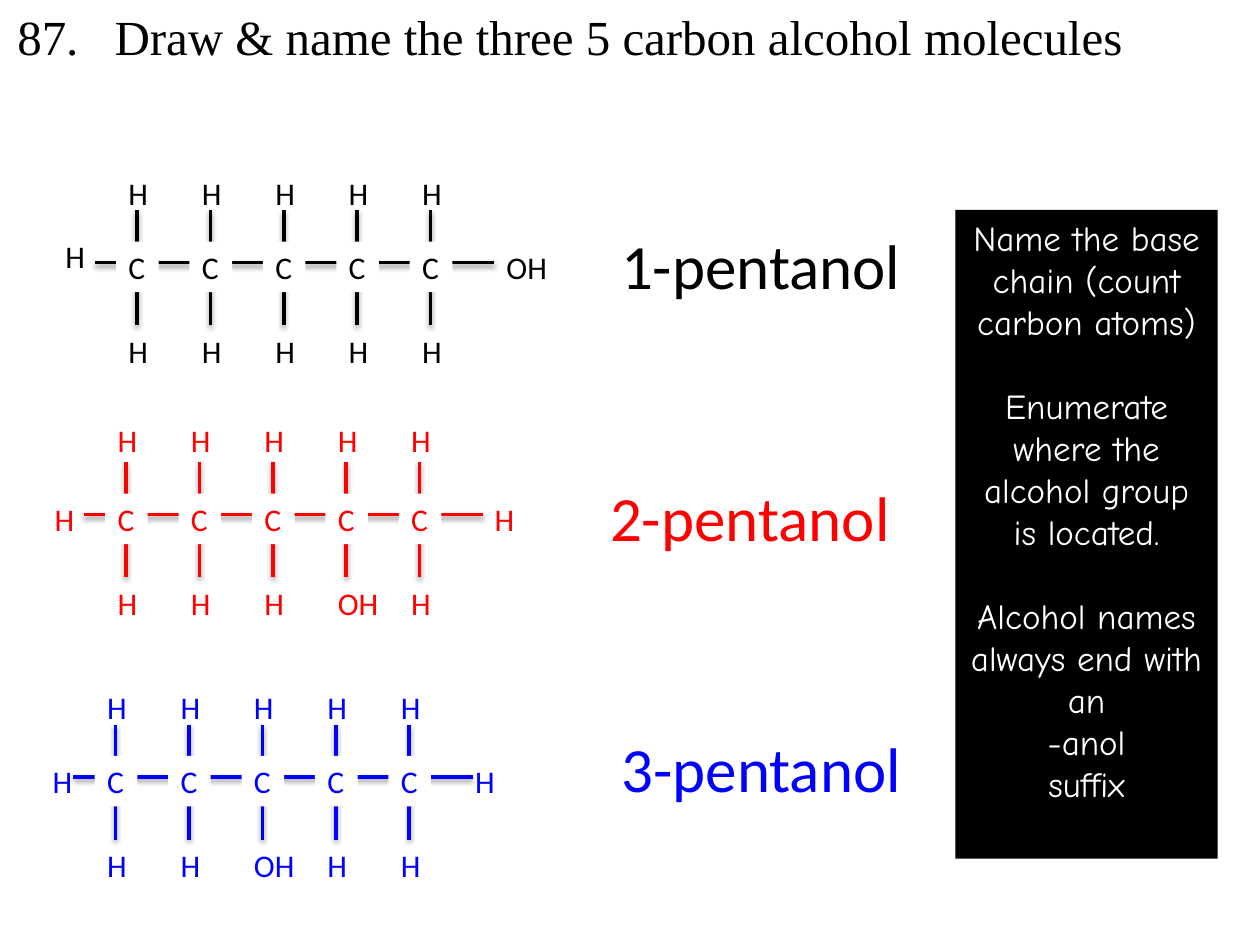
from dataclasses import dataclass

from lxml import etree
from pptx import Presentation
from pptx.dml.color import RGBColor
from pptx.enum import shapes, text
from pptx.oxml import ns, parse_xml
from pptx.util import Cm, Pt


@dataclass(frozen=True)
class Theme:
    black: str = "000000"
    white: str = "FFFFFF"
    red: str = "FF0000"
    blue: str = "0000FF"
    title_font: str = "Times New Roman"
    body_font: str = "Calibri"
    note_font: str = "Comic Neue"
    title: int = 28
    name: int = 36
    note: int = 20
    atom: int = 18
    bond: int = 2


@dataclass(frozen=True)
class Molecule:
    name: str
    color: str
    box: tuple          # left, top of the drawing
    below: str          # atoms under the chain, split by tabs
    left_at: tuple      # left end atom: offset from the chain's start
    right: str
    right_at: tuple     # right end atom: offset from the chain's start
    name_at: tuple      # name: offset from the chain's start
    lift: float = 0     # extra height of the upper hydrogens


T = Theme()
CARBONS = 5
PITCH = 1.48            # distance between carbons
CHAIN_W = 8.05
AXIS = 1.91             # chain's depth below the top of the drawing
FIRST_BOND = 0.85
LINE_H = 1.02

MOLECULES = [
    Molecule("1-pentanol", T.black, (1.91, 3.38), "H\tH\tH\tH\tH",
             (-0.84, -0.64), "OH", (8.05, -0.42), (10.36, -0.84)),
    Molecule("2-pentanol", T.red, (1.69, 8.46), "H\tH\tH\tOH\tH",
             (-0.84, -0.42), "H", (8.03, -0.42), (10.36, -0.84), 0.1),
    Molecule("3-pentanol", T.blue, (1.48, 13.75), "H\tH\tOH\tH\tH",
             (-0.67, -0.42), "H", (7.85, -0.42), (10.8, -1.07)),
]


def rgb(color):
    return RGBColor.from_string(color)


def add_run(p, words, size, color, font):
    r = p.add_run()
    r.text = words
    r.font.size, r.font.name = Pt(size), font
    r.font.color.rgb = rgb(color)


def set_tabs(p, stops):
    tabs = etree.SubElement(p._p.get_or_add_pPr(), ns.qn("a:tabLst"))
    for stop in stops:
        etree.SubElement(tabs, ns.qn("a:tab"), pos=str(Cm(stop)), algn="l")


def add_label(s, x, y, w, h, words, size, color, font=T.body_font, stops=()):
    tf = s.shapes.add_textbox(Cm(x), Cm(y), Cm(w), Cm(h)).text_frame
    tf.word_wrap = True
    p = tf.paragraphs[0]
    if stops:
        set_tabs(p, stops)
    add_run(p, words, size, color, font)


def add_block(s, x, y, w, h, fill):
    sp = s.shapes.add_shape(shapes.MSO_SHAPE.RECTANGLE, Cm(x), Cm(y), Cm(w), Cm(h))
    sp.shadow.inherit = False
    sp.fill.solid()
    sp.fill.fore_color.rgb = rgb(fill)
    sp.line.fill.background()
    sp.text_frame.vertical_anchor = text.MSO_ANCHOR.TOP
    return sp.text_frame


def add_bond(s, x1, y1, x2, y2, color):
    line = s.shapes.add_connector(shapes.MSO_CONNECTOR.STRAIGHT,
                                  Cm(x1), Cm(y1), Cm(x2), Cm(y2))
    line.line.color.rgb = rgb(color)
    line.line.width = Pt(T.bond)
    line._element.spPr.append(parse_xml(
        f'<a:effectLst {ns.nsdecls("a")}>'
        f'<a:outerShdw blurRad="{Pt(3.1)}" dist="{Pt(1.6)}" dir="5400000" rotWithShape="0">'
        f'<a:srgbClr val="{T.black}"><a:alpha val="38000"/></a:srgbClr>'
        '</a:outerShdw></a:effectLst>'))


def draw_title(s, x, y, w, h):
    add_label(s, x, y, w, h, "87.\tDraw & name the three 5 carbon alcohol molecules",
              T.title, T.black, T.title_font, [1.96])


def draw_molecule(s, m):
    x, top = m.box
    axis = top + AXIS
    columns = [x + FIRST_BOND + i * PITCH for i in range(CARBONS)]
    stops = [i * PITCH for i in range(1, CARBONS)]

    # Bonds
    add_bond(s, x, axis, x + CHAIN_W, axis, m.color)
    for cx in columns:
        add_bond(s, cx, axis - 1.05, cx, axis + 1.27, m.color)

    # Rows of atoms above and below the chain
    rows = [(top - m.lift, "\t".join("H" * CARBONS)), (axis + 1.27, m.below)]
    for y, atoms in rows:
        add_label(s, columns[0] - 0.42, y, 8.3, LINE_H, atoms,
                  T.atom, m.color, stops=stops)

    # End atoms and name
    labels = [("H", m.left_at, 0.84, T.atom), (m.right, m.right_at, 1.9, T.atom),
              (m.name, m.name_at, 8.9, T.name)]
    for words, (dx, dy), w, size in labels:
        add_label(s, x + dx, axis + dy, w, LINE_H, words, size, m.color)

    # Carbons, masking the chain behind them
    for cx in columns:
        tf = add_block(s, cx - 0.42, axis - 0.42, 0.86, LINE_H, T.white)
        tf.word_wrap = False
        p = tf.paragraphs[0]
        p.alignment = text.PP_ALIGN.LEFT
        add_run(p, "C", T.atom, m.color, T.body_font)


def draw_note(s, x, y, w, h):
    tf = add_block(s, x, y, w, h, T.black)
    tf.word_wrap = True
    # Lines of each paragraph, and the space before it
    paragraphs = [(["Name the base chain (count carbon atoms)"], 0),
                  (["Enumerate where the alcohol group is located."], 24),
                  (["Alcohol names always end with an", "-anol"], 24),
                  (["suffix"], 0)]
    for i, (lines, gap) in enumerate(paragraphs):
        p = tf.add_paragraph() if i else tf.paragraphs[0]
        p.alignment = text.PP_ALIGN.CENTER
        p.space_before = Pt(gap)
        for j, line in enumerate(lines):
            if j:
                p.add_line_break()
            add_run(p, line, T.note, T.white, T.note_font)


def main():
    prs = Presentation()
    prs.slide_width, prs.slide_height = Cm(25.4), Cm(19.05)
    s = prs.slides.add_slide(prs.slide_layouts[6])
    for m in MOLECULES:
        draw_molecule(s, m)
    draw_note(s, 19.26, 4.23, 5.29, 13.08)
    draw_title(s, 0.1, 0, 25.3, 2.24)
    prs.save("out.pptx")


if __name__ == "__main__":
    main()
